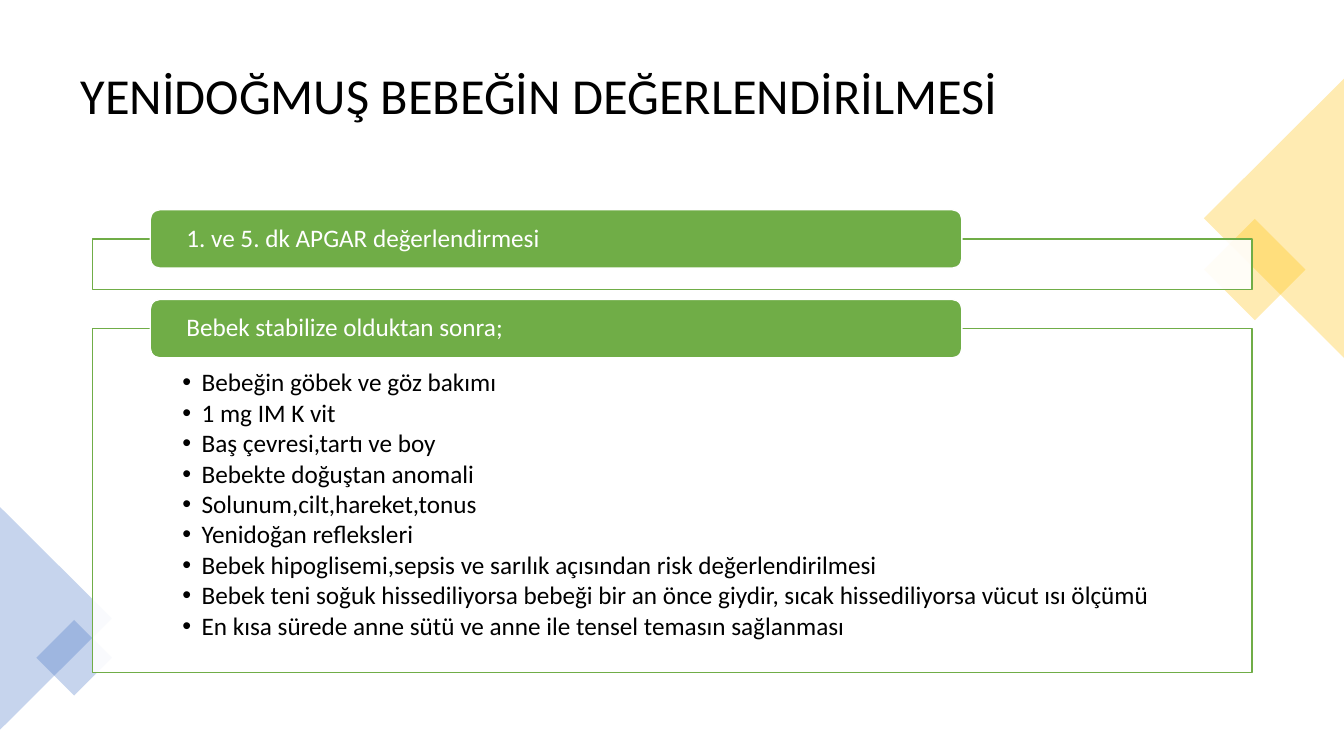
from dataclasses import dataclass

from lxml import etree
from pptx import Presentation
from pptx import util as u
from pptx.dml.color import RGBColor
from pptx.enum import shapes, text
from pptx.oxml import ns

KIND = shapes.MSO_SHAPE


@dataclass(frozen=True)
class Theme:
    font: str = "Calibri"
    dark: str = "000000"
    light: str = "FFFFFF"
    green: str = "70AD47"
    gold: str = "FFC000"
    blue: str = "4472C4"
    title: int = 36
    body: int = 18
    edge: int = 1
    tint: int = 30  # opacity of the side decor, percent
    veil: int = 90  # opacity of the panels, percent


class Page:
    """Places elements by percent of the slide's width and height."""

    def __init__(self, deck, theme):
        self.deck, self.theme = deck, theme
        self.slide = deck.slides.add_slide(deck.slide_layouts[6])

    def place(self, box):
        wide, high = self.deck.slide_width, self.deck.slide_height
        return [int(part * side / 100)
                for part, side in zip(box, (wide, high, wide, high))]

    def shape(self, kind, box, fill, alpha=100, line=None, turn=0):
        item = self.slide.shapes.add_shape(kind, *self.place(box))
        item.shadow.inherit = False
        item.rotation = turn
        item.fill.solid()
        item.fill.fore_color.rgb = RGBColor.from_string(fill)
        if alpha < 100:
            tone = item._element.spPr.find(".//" + ns.qn("a:srgbClr"))
            etree.SubElement(tone, ns.qn("a:alpha"), val=str(alpha * 1000))
        if line:
            item.line.color.rgb = RGBColor.from_string(line)
            item.line.width = u.Pt(self.theme.edge)
        else:
            item.line.fill.background()
        return item

    def label(self, item, lines, size, color, pad, anchor, dots=False):
        frame = item.text_frame
        frame.word_wrap = True
        frame.vertical_anchor = anchor
        (frame.margin_left, frame.margin_top,
         frame.margin_right, frame.margin_bottom) = map(u.Inches, pad)
        frame.text = "\n".join(lines)
        for para in frame.paragraphs:
            para.alignment = text.PP_ALIGN.LEFT
            para.line_spacing = 0.9
            if dots:
                self.bullet(para)
            for run in para.runs:
                run.font.name = self.theme.font
                run.font.size = u.Pt(size)
                run.font.color.rgb = RGBColor.from_string(color)

    def bullet(self, para):
        para.space_after = u.Pt(2.3)
        props = para._p.get_or_add_pPr()
        props.set("marL", str(u.Inches(0.19)))
        props.set("indent", str(u.Inches(-0.19)))
        etree.SubElement(props, ns.qn("a:buFont"), typeface="Arial")
        etree.SubElement(props, ns.qn("a:buChar"), char="•")

    def title(self, words, box):
        item = self.slide.shapes.add_textbox(*self.place(box))
        self.label(item, [words], self.theme.title, self.theme.dark,
                   (0.1, 0.05, 0.1, 0.05), text.MSO_ANCHOR.MIDDLE)

    def decor(self, kind, box, color, turn):
        self.shape(kind, box, color, self.theme.tint, turn=turn)

    def panel(self, top, high, head, items):
        """A framed panel whose header tab straddles its top edge."""
        look = self.theme
        body = self.shape(KIND.RECTANGLE, (6.9, top, 86.27, high),
                          look.light, look.veil, look.green)
        if items:
            self.label(body, items, look.body, look.dark,
                       (0.89, 0.41, 0.89, 0.14), text.MSO_ANCHOR.TOP, True)
        tall = 7.73
        tab = self.shape(KIND.ROUNDED_RECTANGLE,
                         (11.18, top - tall / 2, 60.39, tall),
                         look.green, line=look.light)
        self.label(tab, [head], look.body, look.light,
                   (0.33, 0, 0.33, 0), text.MSO_ANCHOR.MIDDLE)


def main():
    deck = Presentation()
    deck.slide_width, deck.slide_height = u.Inches(13.33), u.Inches(7.5)
    theme = Theme()
    page = Page(deck, theme)

    # Title
    page.title("YENİDOĞMUŞ BEBEĞİN DEĞERLENDİRİLMESİ", (5.25, 4.67, 89.5, 16.53))

    # Side decor
    page.decor(KIND.RECTANGLE, (90.7, 30.93, 5.33, 9.47), theme.gold, 45)
    page.decor(KIND.ISOSCELES_TRIANGLE, (84.4, 19.6, 20.78, 18.53), theme.gold, 270)
    page.decor(KIND.ISOSCELES_TRIANGLE, (-4.13, 74.4, 16.58, 14.8), theme.blue, 90)
    page.decor(KIND.RECTANGLE, (3.53, 83.47, 3.98, 7.07), theme.blue, 45)

    # Panels
    page.panel(31.6, 6.67, "1. ve 5. dk APGAR değerlendirmesi", [])
    page.panel(43.47, 45.47, "Bebek stabilize olduktan sonra;", [
        "Bebeğin göbek ve göz bakımı",
        "1 mg IM K vit",
        "Baş çevresi,tartı ve boy",
        "Bebekte doğuştan anomali",
        "Solunum,cilt,hareket,tonus",
        "Yenidoğan refleksleri",
        "Bebek hipoglisemi,sepsis ve sarılık açısından risk değerlendirilmesi",
        "Bebek teni soğuk hissediliyorsa bebeği bir an önce giydir, "
        "sıcak hissediliyorsa vücut ısı ölçümü",
        "En kısa sürede anne sütü ve anne ile tensel temasın sağlanması",
    ])

    deck.save("out.pptx")


if __name__ == "__main__":
    main()
